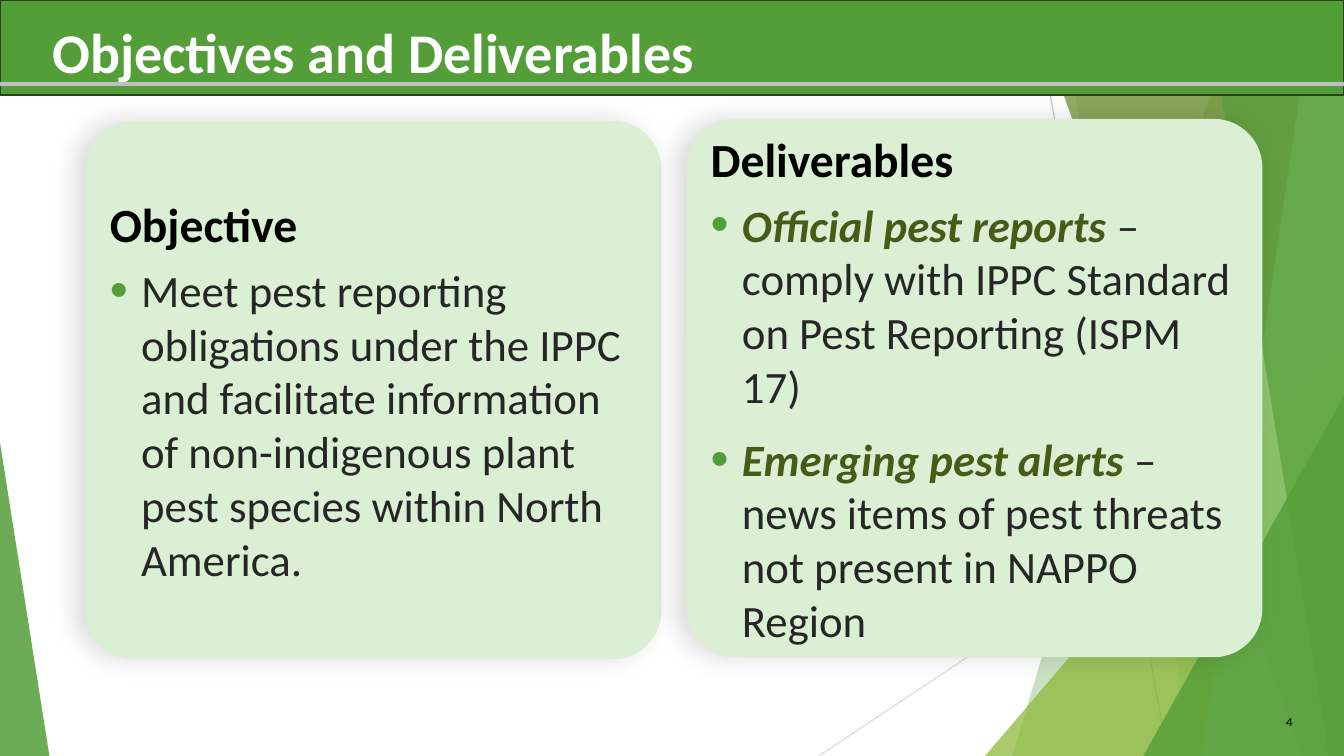
"""Build the slide on objectives and deliverables of pest reporting."""
from dataclasses import dataclass

from lxml import etree
from pptx import Presentation
from pptx.dml.color import RGBColor
from pptx.enum.shapes import MSO_CONNECTOR, MSO_SHAPE
from pptx.enum.text import MSO_ANCHOR, PP_ALIGN
from pptx.oxml.ns import qn
from pptx.util import Inches, Pt

RECTANGLE = MSO_SHAPE.RECTANGLE
ROUNDED = MSO_SHAPE.ROUNDED_RECTANGLE
TRIANGLE = MSO_SHAPE.ISOSCELES_TRIANGLE
STRAIGHT = MSO_CONNECTOR.STRAIGHT
MIDDLE = MSO_ANCHOR.MIDDLE
LEFT, RIGHT = PP_ALIGN.LEFT, PP_ALIGN.RIGHT

BLACK = RGBColor(0x00, 0x00, 0x00)
WHITE = RGBColor(0xFF, 0xFF, 0xFF)
CHARCOAL = RGBColor(0x26, 0x26, 0x26)
SILVER = RGBColor(0xBF, 0xBF, 0xBF)
PALE_GRAY = RGBColor(0xD9, 0xD9, 0xD9)
GREEN = RGBColor(0x54, 0x9E, 0x39)
DARK_GREEN = RGBColor(0x25, 0x45, 0x19)
LIGHT_GREEN = RGBColor(0x93, 0xD0, 0x7D)
MINT = RGBColor(0xDB, 0xEF, 0xD4)
LIME = RGBColor(0x8A, 0xB8, 0x33)
OLIVE = RGBColor(0x67, 0x8A, 0x26)
DARK_OLIVE = RGBColor(0x45, 0x5C, 0x19)

WIDTH, HEIGHT = 13.33, 7.5
Point = tuple[float, float]
Box = tuple[float, float, float, float]


@dataclass(frozen=True)
class Facet:
    points: list[Point]
    color: RGBColor
    opacity: int


@dataclass(frozen=True)
class Wedge:
    box: Box
    apex: float
    color: RGBColor
    opacity: int


@dataclass(frozen=True)
class Rule:
    start: Point
    end: Point
    color: RGBColor
    width: float


@dataclass(frozen=True)
class TextPart:
    text: str
    font: dict


@dataclass(frozen=True)
class Card:
    left: float
    top: float
    heading: str
    bullets: list[list[TextPart]]


def right_facet(top: float, bottom: float, color: RGBColor, opacity: int) -> Facet:
    points = [(top, 0), (WIDTH, 0), (WIDTH, HEIGHT), (bottom, HEIGHT)]
    return Facet(points, color, opacity)


TITLE = {"size": Pt(40), "name": "Calibri", "bold": True, "color": WHITE}
NUMBER = {"size": Pt(9), "name": "Karla", "color": BLACK}
HEADING = {"size": Pt(34), "name": "Calibri", "bold": True, "color": BLACK}
BODY = {"size": Pt(32), "name": "Calibri", "bold": False, "color": CHARCOAL}
TERM = BODY | {"bold": True, "italic": True, "color": DARK_OLIVE}

BACKDROP_RULES = [
    Rule((10.25, 0), (11.58, HEIGHT), SILVER, 0.75),
    Rule((WIDTH, 4.03), (8.12, HEIGHT), PALE_GRAY, 0.75),
]
BACKDROP = [
    right_facet(12.28, 10.04, GREEN, 30),
    right_facet(10.5, 11.83, GREEN, 20),
    Wedge((9.77, 3.33, 3.56, 4.17), 1, LIME, 72),
    right_facet(10.21, 12.91, OLIVE, 70),
    right_facet(13.03, 11.92, LIGHT_GREEN, 70),
    right_facet(11.96, 13.18, GREEN, 65),
    Wedge((11.34, 3.93, 1.99, 3.57), 1, GREEN, 80),
    Wedge((0, 4.39, 0.49, 3.11), 0, GREEN, 85),
]
CARDS = [
    Card(0.85, 1.2, "Objective", [
        [TextPart("Meet pest reporting obligations under the IPPC and facilitate information "
                  "of non-indigenous plant pest species within North America.", BODY)],
    ]),
    Card(6.81, 1.18, "Deliverables", [
        [TextPart("Official pest reports ", TERM),
         TextPart("– comply with IPPC Standard on Pest Reporting (ISPM 17)", BODY)],
        [TextPart("Emerging pest alerts ", TERM),
         TextPart("– news items of pest threats not present in NAPPO Region", BODY)],
    ]),
]


def add_element(parent, tag: str, **attributes):
    return etree.SubElement(parent, qn(tag), attributes)


def paint(shape, color: RGBColor, opacity: int = 100) -> None:
    shape.shadow.inherit = False
    shape.fill.solid()
    shape.fill.fore_color.rgb = color
    shape.line.fill.background()
    if opacity < 100:
        color_element = shape.fill._xPr.find(qn("a:solidFill"))[0]
        add_element(color_element, "a:alpha", val=str(opacity * 1000))


def draw_rule(slide, rule: Rule) -> None:
    ends = [Inches(value) for value in (*rule.start, *rule.end)]
    connector = slide.shapes.add_connector(STRAIGHT, *ends)
    connector.line.color.rgb = rule.color
    connector.line.width = Pt(rule.width)
    add_element(connector._element.spPr, "a:effectLst")


def draw_backdrop(slide, item: Facet | Wedge) -> None:
    if isinstance(item, Wedge):
        shape = slide.shapes.add_shape(TRIANGLE, *map(Inches, item.box))
        shape.adjustments[0] = item.apex
    else:
        points = [(Inches(x), Inches(y)) for x, y in item.points]
        builder = slide.shapes.build_freeform(*points[0])
        builder.add_line_segments(points[1:], close=True)
        shape = builder.convert_to_shape()
    paint(shape, item.color, item.opacity)


def write(paragraph, part: TextPart) -> None:
    run = paragraph.add_run()
    run.text = part.text
    for name, value in part.font.items():
        if name == "color":
            run.font.color.rgb = value
        else:
            setattr(run.font, name, value)


def add_label(slide, box: Box, part: TextPart, layout: dict):
    frame = slide.shapes.add_textbox(*map(Inches, box)).text_frame
    frame.word_wrap = True
    paragraph = frame.paragraphs[0]
    for name, value in layout.items():
        setattr(paragraph, name, value)
    write(paragraph, part)
    return frame


def add_bullet(paragraph) -> None:
    paragraph.space_before, paragraph.space_after = Pt(7.5), Pt(6)
    properties = paragraph._p.get_or_add_pPr()
    properties.set("marL", str(Inches(0.31)))
    properties.set("indent", str(Inches(-0.31)))
    add_element(add_element(properties, "a:buClr"), "a:srgbClr", val=str(GREEN))
    add_element(properties, "a:buSzPct", val="115000")
    add_element(properties, "a:buFont", typeface="Arial")
    add_element(properties, "a:buChar", char="•")


def draw_card(slide, card: Card) -> None:
    box = (card.left, card.top, 5.71, 5.34)
    shape = slide.shapes.add_shape(ROUNDED, *map(Inches, box))
    shape.adjustments[0] = 0.09
    paint(shape, MINT)
    effects = shape._element.spPr.find(qn("a:effectLst"))
    shadow = add_element(effects, "a:outerShdw", blurRad=str(Pt(19)), dist=str(Pt(7)),
                         dir="10800000", algn="ctr", rotWithShape="0")
    add_element(add_element(shadow, "a:srgbClr", val=str(BLACK)), "a:alpha", val="15000")
    frame = shape.text_frame
    frame.word_wrap, frame.vertical_anchor = True, MIDDLE
    frame.paragraphs[0].alignment = LEFT
    write(frame.paragraphs[0], TextPart(card.heading, HEADING))
    for parts in card.bullets:
        paragraph = frame.add_paragraph()
        paragraph.alignment = LEFT
        add_bullet(paragraph)
        for part in parts:
            write(paragraph, part)


def main() -> None:
    presentation = Presentation()
    presentation.slide_width, presentation.slide_height = Inches(WIDTH), Inches(HEIGHT)
    slide = presentation.slides.add_slide(presentation.slide_layouts[6])
    for rule in BACKDROP_RULES:
        draw_rule(slide, rule)
    for item in BACKDROP:
        draw_backdrop(slide, item)
    number = add_label(slide, (12.33, 7, 0.59, 0.31), TextPart("4", NUMBER), {"alignment": RIGHT})
    number.vertical_anchor = MIDDLE
    banner = slide.shapes.add_shape(RECTANGLE, 0, 0, Inches(WIDTH), Inches(0.94))
    paint(banner, GREEN)
    banner.line.color.rgb = DARK_GREEN
    banner.line.width = Pt(1.5)
    title = TextPart("Objectives and Deliverables", TITLE)
    add_label(slide, (0.42, 0.2, 12, 0.97), title, {"line_spacing": 0.9})
    draw_rule(slide, Rule((0, 0.83), (WIDTH, 0.83), SILVER, 3))
    for card in CARDS:
        draw_card(slide, card)
    presentation.save("out.pptx")


if __name__ == "__main__":
    main()
